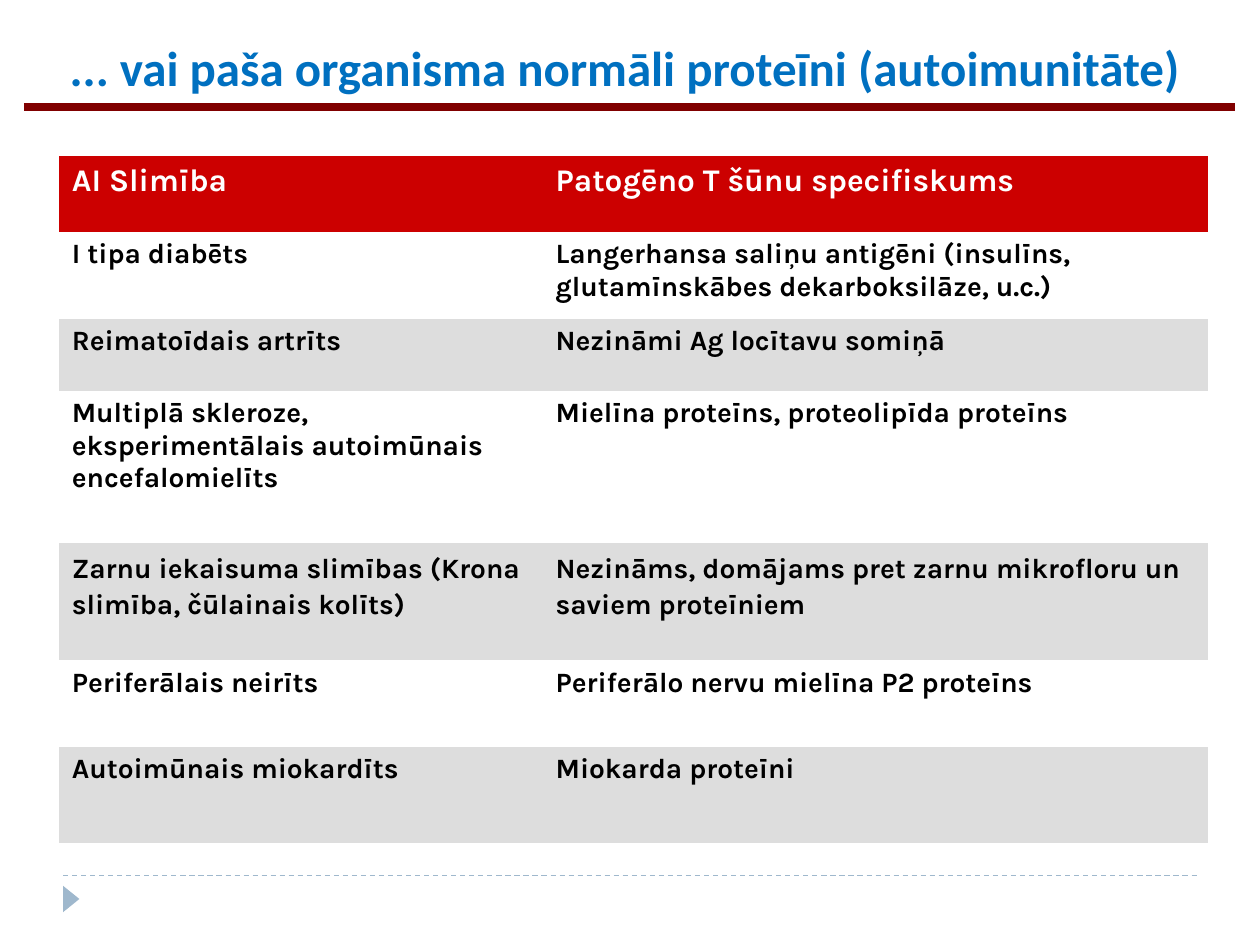
from lxml import etree
from pptx import Presentation
from pptx.dml.color import RGBColor
from pptx.enum.dml import MSO_LINE_DASH_STYLE as Dash
from pptx.enum.shapes import MSO_CONNECTOR as Connector, MSO_SHAPE as Shape
from pptx.enum.text import MSO_ANCHOR as Anchor, MSO_AUTO_SIZE as AutoSize, PP_ALIGN as Align
from pptx.oxml.ns import qn
from pptx.util import Emu, Pt

EMU_PER_PX = 9144
NO_STYLE = "{2D5ABB26-0587-4C30-8999-92F81FD0307C}"
COLORS = {
    "title": "0070C0",
    "rule": "800000",
    "accent": "9FB8CD",
    "header": "CC0000",
    "band": "DDDDDD",
    "light": "FFFFFF",
    "ink": "000000",
}
TITLE = "... vai paša organisma normāli proteīni (autoimunitāte) "
COLUMN_WIDTHS = [384, 528]
ROW_HEIGHTS = [60, 69, 57, 121, 93, 69, 76]
LOOSE_ROW = 4
DISEASES = [
    ("AI Slimība", "Patogēno T šūnu specifiskums"),
    ("I tipa diabēts",
     "Langerhansa saliņu antigēni (insulīns, glutamīnskābes dekarboksilāze, u.c.)"),
    ("Reimatoīdais artrīts", "Nezināmi Ag locītavu somiņā"),
    ("Multiplā skleroze, eksperimentālais autoimūnais encefalomielīts",
     "Mielīna proteīns, proteolipīda proteīns"),
    ("Zarnu iekaisuma slimības (Krona slimība, čūlainais kolīts)",
     "Nezināms, domājams pret zarnu mikrofloru un saviem proteīniem"),
    ("Periferālais neirīts", "Periferālo nervu mielīna P2 proteīns"),
    ("Autoimūnais miokardīts", "Miokarda proteīni"),
]


def px(length):
    return Emu(length * EMU_PER_PX)


def color(name):
    return RGBColor.from_string(COLORS[name])


class SlideBuilder:
    """Draws styled elements on the current slide."""

    def __init__(self, deck):
        self.page = deck.slides.add_slide(deck.slide_layouts[5])

    def add_span(self, para, text, size, font, ink):
        span = para.add_run()
        span.text = text
        span.font.size = Pt(size)
        span.font.name = font
        span.font.bold = True
        span.font.color.rgb = color(ink)

    def title(self, text, left, top, width, height):
        box = self.page.shapes.title
        box.left, box.top, box.width, box.height = map(px, (left, top, width, height))
        frame = box.text_frame
        frame.word_wrap = True
        frame.auto_size = AutoSize.SHAPE_TO_FIT_TEXT
        frame.vertical_anchor = Anchor.TOP
        para = frame.paragraphs[0]
        para.alignment = Align.CENTER
        self.add_span(para, text, 28, "Calibri", "title")

    def rule(self, left, right, y, ink, weight, dash=None):
        line = self.page.shapes.add_connector(
            Connector.STRAIGHT, px(left), px(y), px(right), px(y))
        line.line.color.rgb = color(ink)
        line.line.width = Pt(weight)
        if dash:
            line.line.dash_style = dash
        etree.SubElement(line.element.spPr, qn("a:effectLst"))

    def marker(self, left, top, width, height):
        arrow = self.page.shapes.add_shape(
            Shape.ISOSCELES_TRIANGLE, px(left), px(top), px(width), px(height))
        arrow.rotation = 90
        arrow.shadow.inherit = False
        arrow.fill.solid()
        arrow.fill.fore_color.rgb = color("accent")
        arrow.line.fill.background()

    def table(self, rows, left, top, widths, heights):
        frame = self.page.shapes.add_table(
            len(rows), len(widths), px(left), px(top), px(sum(widths)), px(sum(heights)))
        grid = frame.table
        frame.element.find(".//" + qn("a:tableStyleId")).text = NO_STYLE
        grid.horz_banding = False
        for column, width in zip(grid.columns, widths):
            column.width = px(width)
        for index, (texts, height) in enumerate(zip(rows, heights)):
            grid.rows[index].height = px(height)
            for cell, text in zip(grid.rows[index].cells, texts):
                self.fill_cell(cell, text, index)

    def fill_cell(self, cell, text, row):
        if row % 2:
            cell.fill.background()
        else:
            cell.fill.solid()
            cell.fill.fore_color.rgb = color("band" if row else "header")
        para = cell.text_frame.paragraphs[0]
        if row == LOOSE_ROW:
            para.line_spacing = 1.1
        size, ink = (16, "ink") if row else (18, "light")
        self.add_span(para, text, size, "Karla", ink)


def main():
    deck = Presentation()
    deck.slide_width, deck.slide_height = px(1000), px(750)
    builder = SlideBuilder(deck)
    builder.rule(50, 950, 695, "accent", 0.75, Dash.DASH)
    builder.marker(46, 707, 21, 13)
    builder.title(TITLE, 0, 25, 1000, 57)
    builder.rule(19, 980, 85, "rule", 4.5)
    builder.table(DISEASES, 47, 124, COLUMN_WIDTHS, ROW_HEIGHTS)
    deck.save("out.pptx")


if __name__ == "__main__":
    main()
